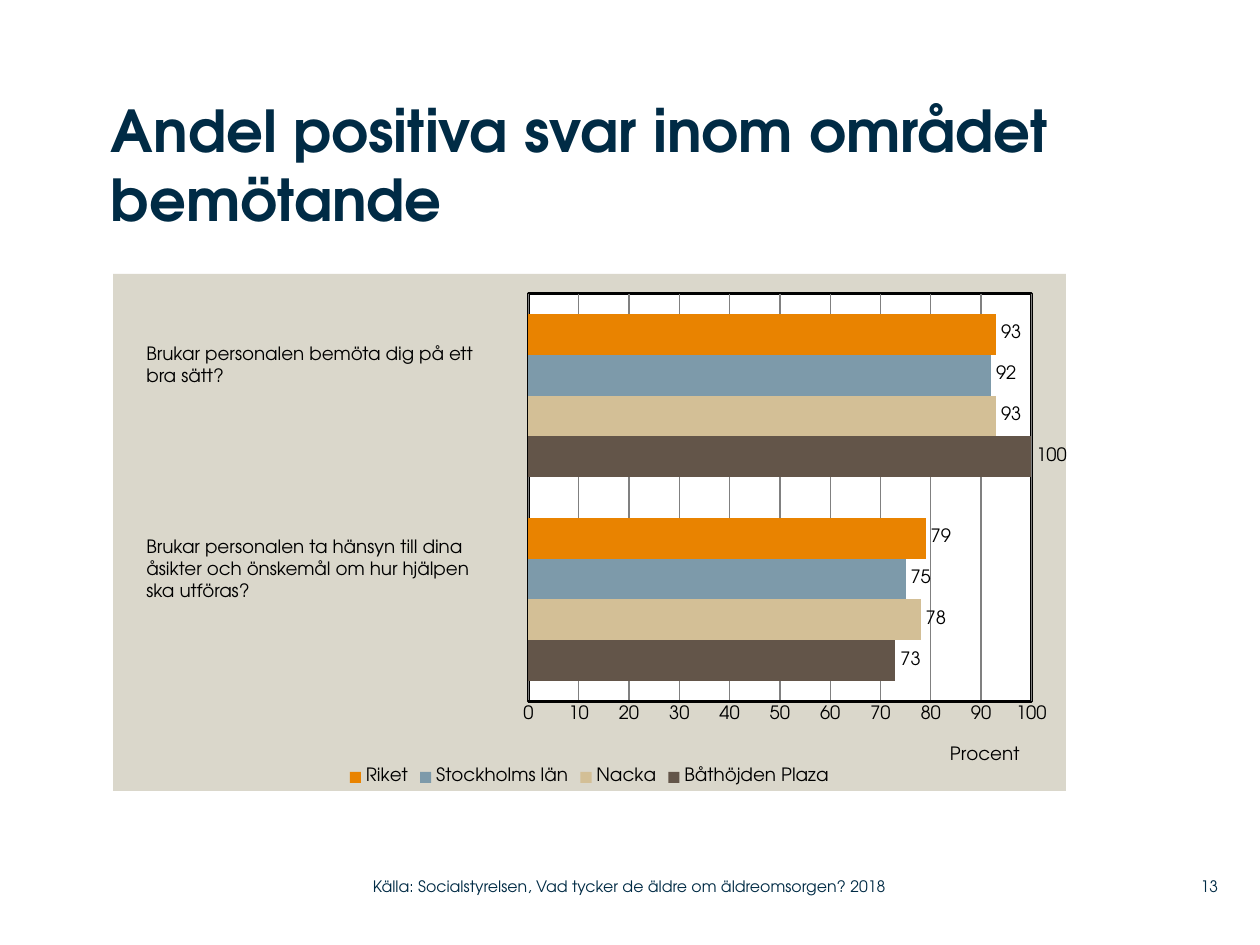
from lxml import etree
from pptx import Presentation
from pptx import util as u
from pptx.chart.data import CategoryChartData
from pptx.dml.color import RGBColor
from pptx.enum import chart as ch, text
from pptx.oxml import parse_xml
from pptx.oxml.ns import nsdecls, qn

PX = 914400 / 126
FONT = "TeX Gyre Adventor"
NAVY = RGBColor(0x00, 0x2B, 0x45)
BLACK = RGBColor(0, 0, 0)
GRID = RGBColor(0x80, 0x80, 0x80)
SAND = RGBColor(0xDA, 0xD7, 0xCB)
WHITE = RGBColor(0xFF, 0xFF, 0xFF)
BROWN = RGBColor(0x63, 0x55, 0x49)
BEIGE = RGBColor(0xD3, 0xBF, 0x96)
BLUE = RGBColor(0x7D, 0x9A, 0xAA)
ORANGE = RGBColor(0xE9, 0x83, 0x00)


def place(parent, index, **fractions):
    for old in parent.findall(qn("c:layout")):
        parent.remove(old)
    layout = etree.Element(qn("c:layout"))
    manual = etree.SubElement(layout, qn("c:manualLayout"))
    for tag, value in fractions.items():
        etree.SubElement(manual, qn("c:" + tag)).set("val", str(value))
    parent.insert(index, layout)


def surface(fill, line):
    return parse_xml(
        f'<c:spPr {nsdecls("c", "a")}><a:solidFill><a:srgbClr val="{fill}"/></a:solidFill>{line}</c:spPr>'
    )


prs = Presentation()
prs.slide_width, prs.slide_height = u.Inches(10), u.Inches(7.5)
slide = prs.slides.add_slide(prs.slide_layouts[6])

answers = CategoryChartData()
answers.categories = ["1", "2"]
areas = [
    ("Båthöjden Plaza", (73, 100), BROWN),
    ("Nacka", (78, 93), BEIGE),
    ("Stockholms län", (75, 92), BLUE),
    ("Riket", (79, 93), ORANGE),
]
for name, shares, _ in areas:
    answers.add_series(name, shares)
bounds = [int(n * PX) for n in (113, 274, 954, 517)]
chart = slide.shapes.add_chart(ch.XL_CHART_TYPE.BAR_CLUSTERED, *bounds, answers).chart
chart.has_title = False
chart.font.name, chart.font.size = FONT, u.Pt(10.5)
chart.font.color.rgb = BLACK
chart.has_legend = True
chart.legend.position = ch.XL_LEGEND_POSITION.BOTTOM
chart.legend.include_in_layout = False
chart.category_axis.visible = False

percent = chart.value_axis
percent.minimum_scale, percent.maximum_scale, percent.major_unit = 0, 100, 10
percent.major_tick_mark = ch.XL_TICK_MARK.NONE
percent.format.line.color.rgb = BLACK
percent.format.line.width = u.Pt(2)
percent.major_gridlines.format.line.color.rgb = GRID
percent.major_gridlines.format.line.width = u.Pt(0.75)
percent.axis_title.text_frame.text = "Procent"
unit = percent.axis_title.text_frame.paragraphs[0].font
unit.name, unit.size, unit.bold = FONT, u.Pt(10.5), False
unit.color.rgb = BLACK
place(percent.axis_title._element, 1, xMode="edge", yMode="edge", x=0.875, y=0.905)

bars = chart.plots[0]
bars.gap_width, bars.overlap, bars.vary_by_categories = 100, 0, False
for series, (_, _, color) in zip(bars.series, areas):
    series.format.fill.solid()
    series.format.fill.fore_color.rgb = color
    labels = series.data_labels
    labels.show_value = True
    labels.position = ch.XL_LABEL_POSITION.OUTSIDE_END
    labels.font.name, labels.font.size = FONT, u.Pt(10.5)

space = chart._chartSpace
plot_area = space.chart.plotArea
place(plot_area, 0, layoutTarget="inner", xMode="edge", yMode="edge",
      x=0.436, y=0.038, w=0.528, h=0.789)
frame = f'<a:ln w="25400"><a:solidFill><a:srgbClr val="{BLACK}"/></a:solidFill></a:ln>'
plot_area.append(surface(WHITE, frame))
space.chart.addnext(surface(SAND, "<a:ln><a:noFill/></a:ln>"))

TOP, MIDDLE = text.MSO_ANCHOR.TOP, text.MSO_ANCHOR.MIDDLE
LEFT, RIGHT = text.PP_ALIGN.LEFT, text.PP_ALIGN.RIGHT
texts = [
    ((111, 95, 958, 179), "Andel positiva svar inom området bemötande", 33, NAVY, True, TOP, LEFT, (0, 0)),
    ((134, 336, 374, 57), "Brukar personalen bemöta dig på ett\nbra sätt?",
     10.5, BLACK, False, TOP, LEFT, (0.1, 0.05)),
    ((134, 529, 377, 79),
     "Brukar personalen ta hänsyn till dina\nåsikter och önskemål om hur hjälpen\nska utföras?",
     10.5, BLACK, False, TOP, LEFT, (0.1, 0.05)),
    ((1159, 868, 59, 37), "13", 9, NAVY, False, MIDDLE, RIGHT, (0, 0)),
    ((373, 868, 558, 37), "Källa: Socialstyrelsen, Vad tycker de äldre om äldreomsorgen? 2018",
     9, NAVY, False, MIDDLE, LEFT, (0, 0)),
]
for box, words, size, color, bold, anchor, align, (side, edge) in texts:
    body = slide.shapes.add_textbox(*[int(n * PX) for n in box]).text_frame
    body.word_wrap = True
    body.vertical_anchor = anchor
    body.margin_left = body.margin_right = u.Inches(side)
    body.margin_top = body.margin_bottom = u.Inches(edge)
    body.text = words
    for paragraph in body.paragraphs:
        paragraph.alignment = align
        paragraph.font.name, paragraph.font.size, paragraph.font.bold = FONT, u.Pt(size), bold
        paragraph.font.color.rgb = color

prs.save("out.pptx")
